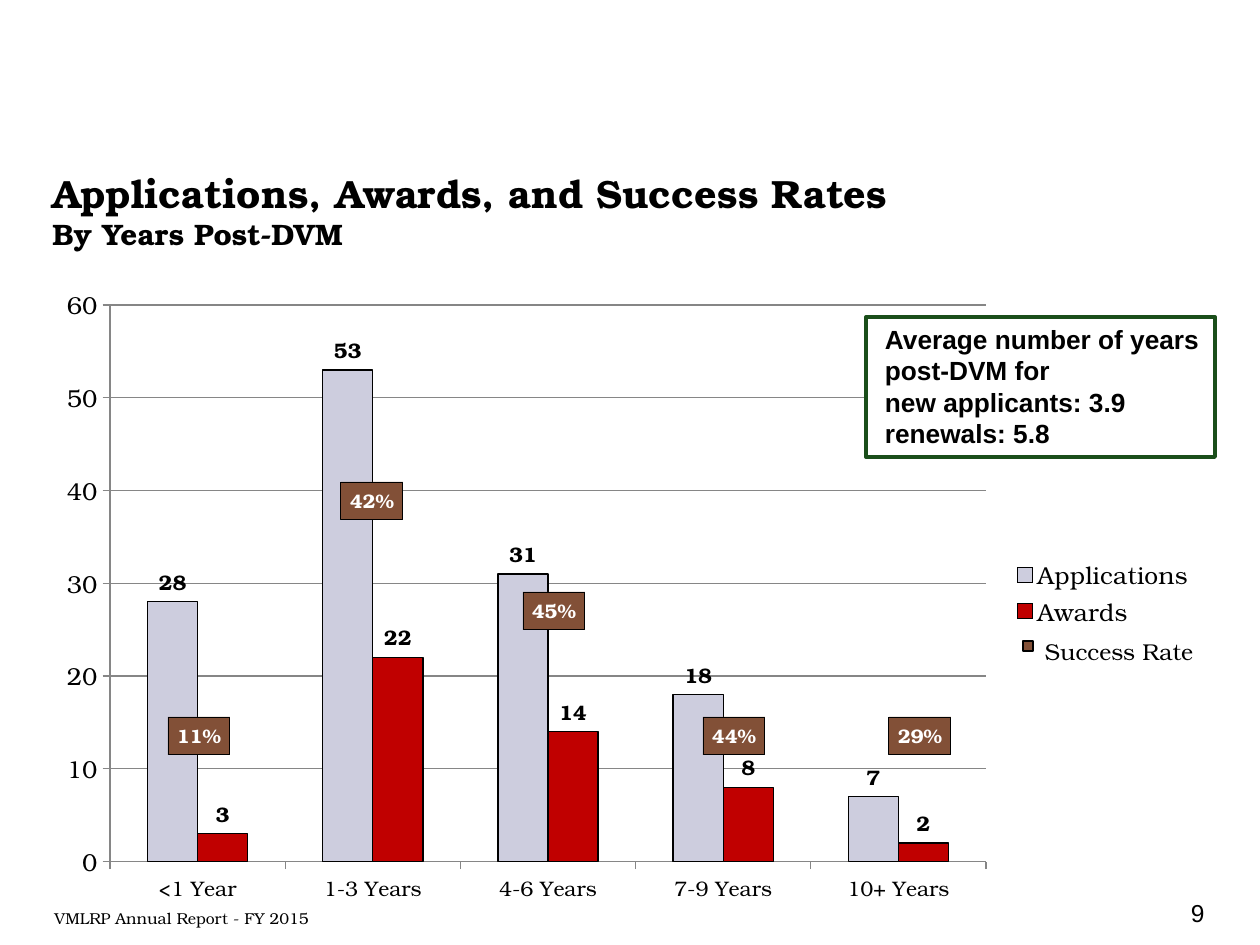
import pptx
import pptx.util
import pptx.chart.data
from pptx.dml.color import RGBColor
from pptx.enum.chart import XL_CHART_TYPE, XL_LABEL_POSITION, XL_LEGEND_POSITION, XL_TICK_MARK
from pptx.enum.shapes import MSO_SHAPE
from pptx.enum.text import MSO_ANCHOR, PP_ALIGN
from pptx.oxml import parse_xml
from pptx.oxml.ns import nsdecls

SERIF = "TeX Gyre Bonum"
SANS = "Arial"
BLACK = RGBColor(0, 0, 0)
WHITE = RGBColor(255, 255, 255)
LILAC = RGBColor(0xCD, 0xCD, 0xDE)
RED = RGBColor(0xC0, 0, 0)
BROWN = RGBColor(0x82, 0x50, 0x37)
GREEN = RGBColor(0x1A, 0x4E, 0x1A)
GRAY = RGBColor(0x86, 0x86, 0x86)


def px(n):
    return round(n * 914400 / 126)


def style(font, size, color=BLACK, bold=False, face=SERIF):
    font.name = face
    font.size = pptx.util.Pt(size)
    font.bold = bold
    font.color.rgb = color


def stroke(line, color, width):
    line.color.rgb = color
    line.width = pptx.util.Pt(width)


def write(frame, paras, color=BLACK, bold=False, face=SERIF,
          align=PP_ALIGN.LEFT, anchor=MSO_ANCHOR.TOP, left=None, wrap=True):
    frame.word_wrap = wrap
    frame.vertical_anchor = anchor
    if left is not None:
        frame.margin_left = px(left)
    for i, lines in enumerate(paras):
        para = frame.add_paragraph() if i else frame.paragraphs[0]
        para.alignment = align
        for j, (text, size) in enumerate(lines):
            if j:
                para.add_line_break()
            run = para.add_run()
            run.text = text
            style(run.font, size, color, bold, face)


def label(slide, box, paras, **look):
    shape = slide.shapes.add_textbox(*map(px, box))
    write(shape.text_frame, paras, **look)


def block(slide, box, fill, line, width):
    shape = slide.shapes.add_shape(MSO_SHAPE.RECTANGLE, *map(px, box))
    shape.shadow.inherit = False
    shape.fill.solid()
    shape.fill.fore_color.rgb = fill
    stroke(shape.line, line, width)
    return shape


def badge(slide, x, y, text):
    shape = block(slide, (x, y, 62, 38), BROWN, BLACK, 0.5)
    shape.text_frame.margin_left = shape.text_frame.margin_right = 0
    write(shape.text_frame, [[(text, 11.2)]], WHITE, True,
          align=PP_ALIGN.CENTER, anchor=MSO_ANCHOR.MIDDLE)


def place(part, x, y, w, h, inner=False):
    target = '<c:layoutTarget val="inner"/>' if inner else ""
    sizes = "".join(f'<c:{k} val="{v}"/>' for k, v in zip("xywh", (x, y, w, h)))
    layout = parse_xml(
        f'<c:layout {nsdecls("c")}><c:manualLayout>{target}'
        f'<c:xMode val="edge"/><c:yMode val="edge"/>{sizes}'
        '</c:manualLayout></c:layout>')
    for old in part.findall(layout.tag):
        part.remove(old)
    part.insert(0 if inner else 1, layout)


def graph(slide):
    data = pptx.chart.data.CategoryChartData()
    data.categories = ["<1 Year", "1-3 Years", "4-6 Years", "7-9 Years", "10+ Years"]
    data.add_series("Applications", (28, 53, 31, 18, 7))
    data.add_series("Awards", (3, 22, 14, 8, 2))
    chart = slide.shapes.add_chart(
        XL_CHART_TYPE.COLUMN_CLUSTERED, *map(px, (40, 273, 1168, 640)), data).chart
    chart.has_title = False
    style(chart.font, 18)
    plot = chart.plots[0]
    plot.gap_width = 150
    plot.overlap = 0
    plot.vary_by_categories = False
    for series, color in zip(plot.series, (LILAC, RED)):
        series.format.fill.solid()
        series.format.fill.fore_color.rgb = color
        stroke(series.format.line, BLACK, 0.75)
        labels = series.data_labels
        labels.show_value = True
        labels.position = XL_LABEL_POSITION.OUTSIDE_END
        style(labels.font, 12, bold=True)
    for axis, size in ((chart.category_axis, 12), (chart.value_axis, 14)):
        axis.major_tick_mark = XL_TICK_MARK.OUTSIDE
        axis.minor_tick_mark = XL_TICK_MARK.NONE
        stroke(axis.format.line, GRAY, 0.75)
        style(axis.tick_labels.font, size)
    scale = chart.value_axis
    scale.minimum_scale, scale.maximum_scale, scale.major_unit = 0, 60, 10
    scale.has_major_gridlines = True
    stroke(scale.major_gridlines.format.line, GRAY, 0.75)
    chart.has_legend = True
    legend = chart.legend
    legend.position = XL_LEGEND_POSITION.RIGHT
    legend.include_in_layout = False
    style(legend.font, 14)
    place(chart.plots[0]._element.getparent(), 0.06, 0.05, 0.75, 0.87, True)
    place(legend._element, 0.83, 0.44, 0.16, 0.12)


def main():
    deck = pptx.Presentation()
    deck.slide_width, deck.slide_height = px(1260), px(945)
    slide = deck.slides.add_slide(deck.slide_layouts[6])
    label(slide, (42, 903, 305, 38), [[("VMLRP Annual Report - FY 2015", 9)]])
    label(slide, (40, 158, 1168, 105),
          [[("Applications, Awards, and Success Rates", 22.5),
            ("By Years Post-DVM", 16.9)]],
          bold=True, anchor=MSO_ANCHOR.MIDDLE)
    graph(slide)
    for x, y, text in ((168, 717, "11%"), (341, 482, "42%"), (523, 592, "45%"),
                       (703, 717, "44%"), (889, 717, "29%")):
        badge(slide, x, y, text)
    label(slide, (1018, 631, 238, 40), [[("Success Rate", 13.1)]], left=27)
    block(slide, (1023, 641, 10, 10), BROWN, BLACK, 0.75)
    label(slide, (955, 892, 262, 63), [[("9", 14)]], face=SANS, align=PP_ALIGN.RIGHT)
    note = block(slide, (866, 317, 349, 140), WHITE, GREEN, 2.25)
    write(note.text_frame,
          [[("Average number of years", 15), ("post-DVM for", 15)],
           [("new applicants: 3.9", 15), ("renewals: 5.8", 15)]],
          bold=True, face=SANS, left=19, wrap=False)
    deck.save("out.pptx")


if __name__ == "__main__":
    main()
